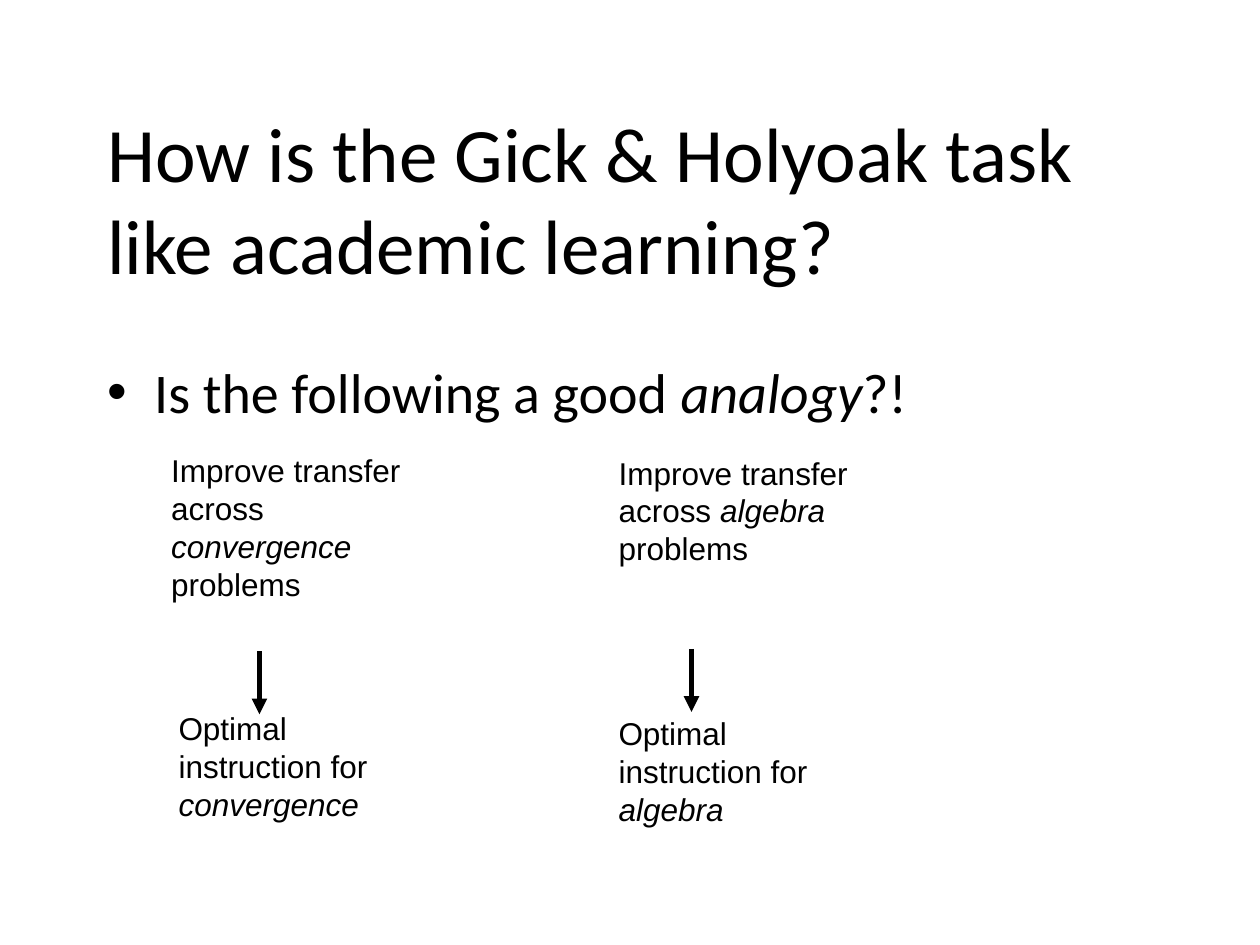
from lxml import etree
from pptx import Presentation
from pptx.dml.color import RGBColor
from pptx.enum.shapes import MSO_CONNECTOR
from pptx.enum.text import MSO_ANCHOR
from pptx.oxml.ns import qn
from pptx.util import Cm, Pt

BLACK = RGBColor(0, 0, 0)
LINE = MSO_CONNECTOR.STRAIGHT
TOP = MSO_ANCHOR.TOP
MID = MSO_ANCHOR.MIDDLE

deck = Presentation()
deck.slide_width = Cm(25.4)
deck.slide_height = Cm(19.05)
slide = deck.slides.add_slide(deck.slide_layouts[6])

HEAD = {"name": "Calibri", "size": Pt(44)}
BODY = {"name": "Calibri", "size": Pt(32)}
NOTE = {"name": "Arial", "size": Pt(18)}


def add_text(box, runs, style, anchor=TOP):
    frame = slide.shapes.add_textbox(*map(Cm, box)).text_frame
    frame.word_wrap = True
    frame.vertical_anchor = anchor
    para = frame.paragraphs[0]
    for text, slant in runs:
        run = para.add_run()
        run.text = text
        for key, value in {**style, "italic": slant}.items():
            setattr(run.font, key, value)
        run.font.color.rgb = BLACK
    return para


add_text((1.91, 1.55, 21.51, 4.88),
         [("How is the Gick & Holyoak task like academic learning?", False)],
         HEAD, MID)

para = add_text((1.91, 7.09, 21.59, 3.2),
                [("Is the following a good ", False), ("analogy", True), ("?!", False)],
                BODY)
para.space_before = Pt(6.4)
props = para._p.get_or_add_pPr()
props.set("marL", str(Cm(0.95)))
props.set("indent", str(-Cm(0.95)))
etree.SubElement(props, qn("a:buFont")).set("typeface", "Arial")
etree.SubElement(props, qn("a:buChar")).set("char", "•")

columns = [
    ("convergence", (3.2, 8.97), (3.35, 14.17), (5.23, 13.13)),
    ("algebra", (12.22, 9.02), (12.22, 14.27), (13.94, 13.08)),
]
for topic, goal, means, start in columns:
    add_text((*goal, 5.74, 4.32),
             [("Improve transfer across ", False), (topic, True), (" problems", False)],
             NOTE)
    add_text((*means, 5.74, 3.3),
             [("Optimal instruction for ", False), (topic, True)], NOTE)
    left, top = start
    arrow = slide.shapes.add_connector(LINE, Cm(left), Cm(top), Cm(left), Cm(top + 1.27))
    arrow.line.color.rgb = BLACK
    arrow.line.width = Pt(3)
    etree.SubElement(arrow.line._get_or_add_ln(), qn("a:tailEnd")).set("type", "triangle")
    etree.SubElement(arrow._element.spPr, qn("a:effectLst"))

deck.save("out.pptx")
